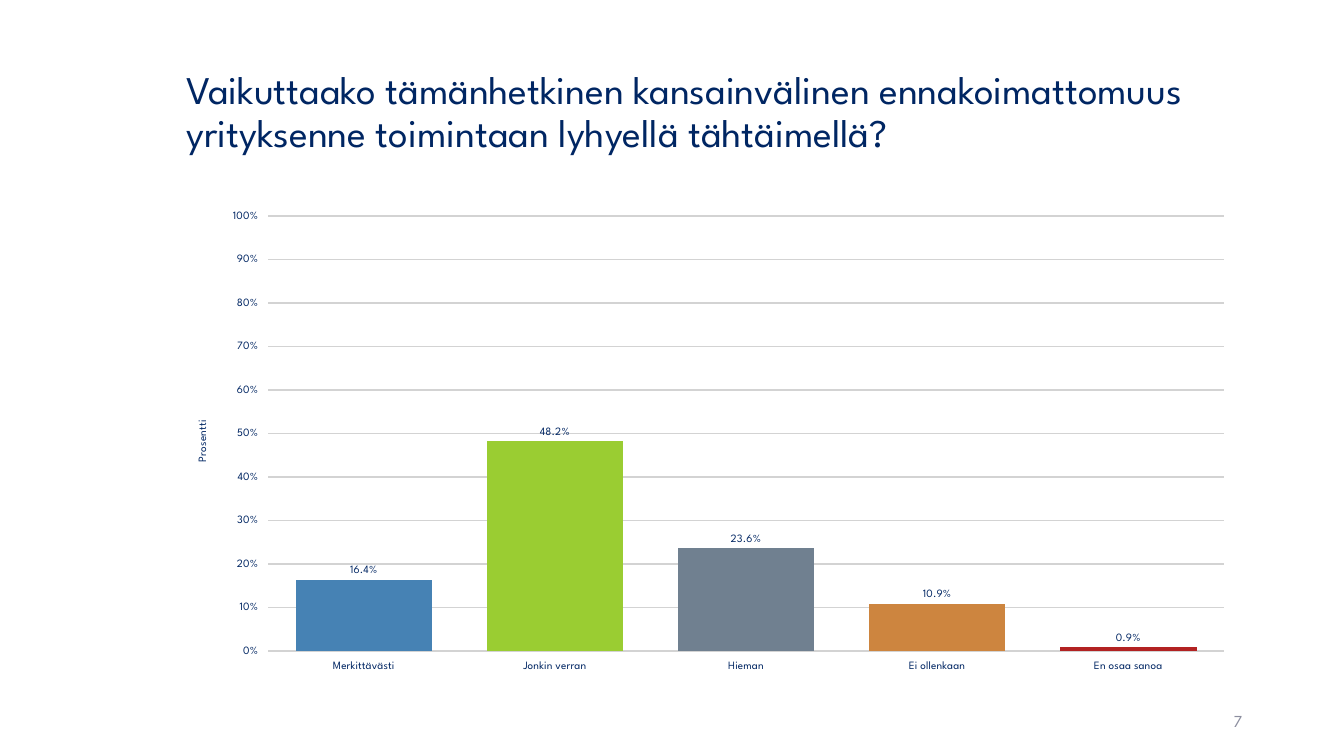
from dataclasses import dataclass

import pptx
import pptx.chart.data
import pptx.dml.color
import pptx.enum.chart
import pptx.enum.text
import pptx.oxml
import pptx.oxml.ns
import pptx.util
from pptx.util import Inches


@dataclass(frozen=True)
class Theme:
    font: str = "League Spartan"
    navy: str = "002663"
    muted: str = "8C8E9F"
    grid: str = "D3D3D3"
    bars: tuple = ("4682B4", "9ACD32", "708090", "CD853F", "B22222")
    title_size: int = 28
    number_size: int = 12
    chart_size: int = 18
    label_size: int = 8


THEME = Theme()
ANSWERS = {
    "Merkittävästi": 0.164,
    "Jonkin verran": 0.482,
    "Hieman": 0.236,
    "Ei ollenkaan": 0.109,
    "En osaa sanoa": 0.009,
}


def rgb(color):
    return pptx.dml.color.RGBColor.from_string(color)


def style_font(font, size, color):
    font.name = THEME.font
    font.size = pptx.util.Pt(size)
    font.bold = False
    font.color.rgb = rgb(color)


def write_text(frame, text, size, color=THEME.navy, align=None,
               line_spacing=None, space_after=None):
    frame.word_wrap = True
    frame.auto_size = pptx.enum.text.MSO_AUTO_SIZE.NONE
    frame.vertical_anchor = pptx.enum.text.MSO_ANCHOR.MIDDLE
    paragraph = frame.paragraphs[0]
    paragraph.alignment = align
    paragraph.line_spacing = line_spacing
    if space_after is not None:
        paragraph.space_after = pptx.util.Pt(space_after)
    run = paragraph.add_run()
    run.text = text
    style_font(run.font, size, color)


def set_plot_layout(chart, **fractions):
    """Fix the inner plot area as fractions of the chart frame."""
    plot_area = chart._chartSpace.chart.plotArea
    for layout in plot_area.findall(pptx.oxml.ns.qn("c:layout")):
        plot_area.remove(layout)
    parts = "".join(f'<c:{name} val="{value}"/>' for name, value in fractions.items())
    plot_area.insert(0, pptx.oxml.parse_xml(
        f'<c:layout {pptx.oxml.ns.nsdecls("c")}><c:manualLayout>'
        '<c:layoutTarget val="inner"/><c:xMode val="edge"/><c:yMode val="edge"/>'
        f'{parts}</c:manualLayout></c:layout>'))


class SlideBuilder:
    def __init__(self, presentation, theme):
        self.theme = theme
        self.slide = presentation.slides.add_slide(presentation.slide_layouts[5])

    def title(self, text, left, top, width, height):
        shape = self.slide.shapes.title
        shape.left, shape.top = Inches(left), Inches(top)
        shape.width, shape.height = Inches(width), Inches(height)
        write_text(shape.text_frame, text, self.theme.title_size,
                   align=pptx.enum.text.PP_ALIGN.LEFT, line_spacing=0.9)

    def page_number(self, text, left, top, width, height):
        shape = self.slide.shapes.add_textbox(
            Inches(left), Inches(top), Inches(width), Inches(height))
        write_text(shape.text_frame, text, self.theme.number_size, self.theme.muted,
                   align=pptx.enum.text.PP_ALIGN.RIGHT, space_after=6)

    def column_chart(self, answers, value_title, left, top, width, height):
        theme = self.theme
        data = pptx.chart.data.CategoryChartData()
        data.categories = list(answers)
        data.add_series("Series 1", list(answers.values()))
        chart = self.slide.shapes.add_chart(
            pptx.enum.chart.XL_CHART_TYPE.COLUMN_CLUSTERED,
            Inches(left), Inches(top), Inches(width), Inches(height), data).chart
        chart.has_legend = False
        chart.has_title = False
        style_font(chart.font, theme.chart_size, theme.navy)
        self.format_axes(chart, value_title)
        self.format_bars(chart.plots[0])
        set_plot_layout(chart, x=0.086, y=0.03, w=0.895, h=0.907)

    def format_axes(self, chart, value_title):
        theme = self.theme
        for axis in (chart.category_axis, chart.value_axis):
            axis.major_tick_mark = pptx.enum.chart.XL_TICK_MARK.OUTSIDE
            axis.format.line.fill.background()
            style_font(axis.tick_labels.font, theme.label_size, theme.navy)
        axis = chart.value_axis
        axis.minimum_scale, axis.maximum_scale, axis.major_unit = 0, 1, 0.1
        axis.tick_labels.number_format = "0%"
        axis.tick_labels.number_format_is_linked = False
        axis.has_major_gridlines = True
        grid_line = axis.major_gridlines.format.line
        grid_line.color.rgb = rgb(theme.grid)
        grid_line.width = pptx.util.Pt(1)
        write_text(axis.axis_title.text_frame, value_title, theme.label_size)

    def format_bars(self, plot):
        theme = self.theme
        plot.gap_width = 40
        plot.overlap = -2
        plot.vary_by_categories = False
        series = plot.series[0]
        series.format.fill.solid()
        series.format.fill.fore_color.rgb = rgb(theme.bars[0])
        for index, color in enumerate(theme.bars):
            fill = series.points[index].format.fill
            fill.solid()
            fill.fore_color.rgb = rgb(color)
        labels = series.data_labels
        labels.show_value = True
        labels.number_format = "0.0%"
        labels.number_format_is_linked = False
        labels.position = pptx.enum.chart.XL_LABEL_POSITION.OUTSIDE_END
        style_font(labels.font, theme.label_size, theme.navy)


def main():
    presentation = pptx.Presentation()
    presentation.slide_width = Inches(13.33)
    presentation.slide_height = Inches(7.5)
    builder = SlideBuilder(presentation, THEME)
    builder.title("Vaikuttaako tämänhetkinen kansainvälinen ennakoimattomuus "
                  "yrityksenne toimintaan lyhyellä tähtäimellä?", 1.75, 0.4, 10.59, 1.45)
    builder.page_number("7", 9.42, 6.95, 3, 0.4)
    builder.column_chart(ANSWERS, "Prosentti", 1.75, 2, 10.59, 4.76)
    presentation.save("out.pptx")


if __name__ == "__main__":
    main()
